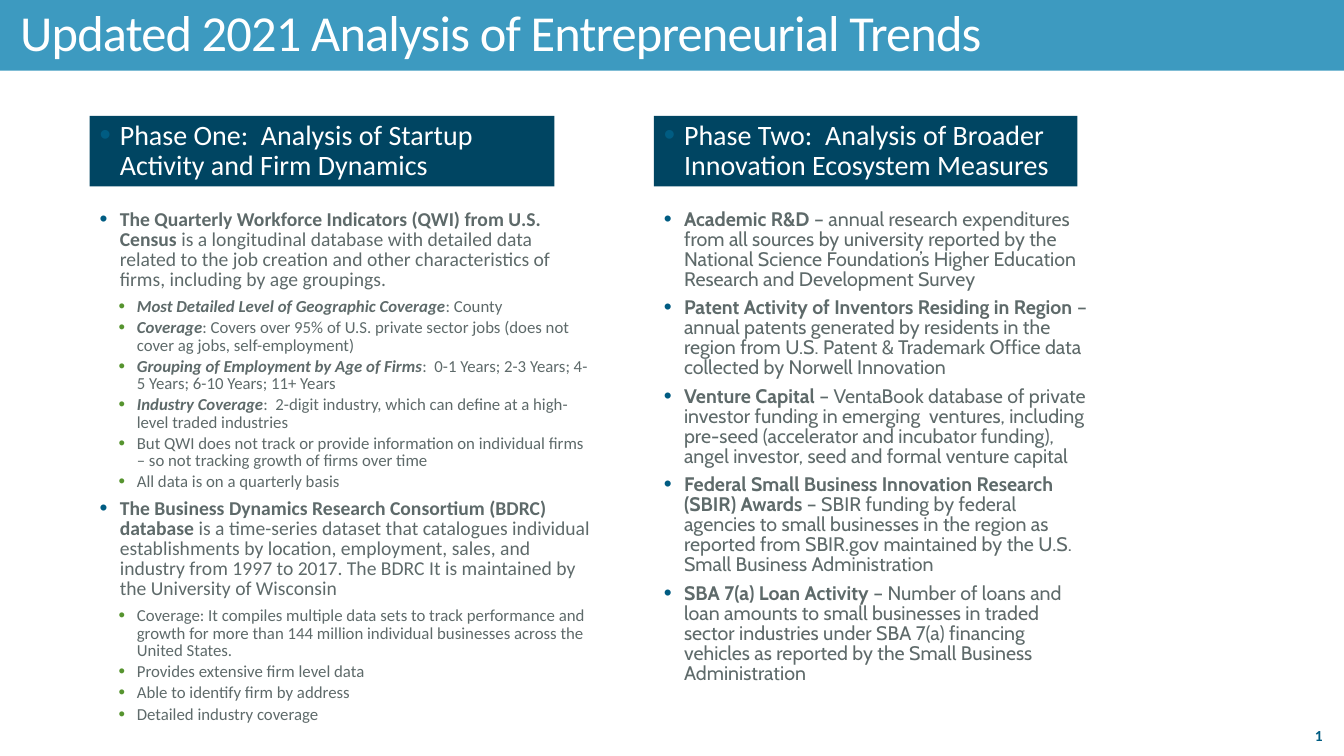
import pptx
import pptx.dml.color
import pptx.enum.shapes
import pptx.enum.text
import pptx.oxml
import pptx.oxml.ns
import pptx.util
import lxml.etree

Cm = pptx.util.Cm
Pt = pptx.util.Pt
ALIGN = pptx.enum.text.PP_ALIGN
ANCHOR = pptx.enum.text.MSO_ANCHOR

TITLE = "Updated 2021 Analysis of Entrepreneurial Trends"
PAGE_NUMBER = "2"

PHASES = [
    {
        "heading": "Phase One:  Analysis of Startup Activity and Firm Dynamics",
        "font": "Calibri", "left": 2.26, "heading_width": 11.71,
        "body_width": 12.9, "body_height": 13.44,
        "points": [
            (0, "The Quarterly Workforce Indicators (QWI) from U.S. Census ",
             "is a longitudinal database with detailed data related to the job creation and other "
             "characteristics of firms, including by age groupings."),
            (1, "Most Detailed Level of Geographic Coverage", ": County"),
            (1, "Coverage", ": Covers over 95% of U.S. private sector jobs (does not cover ag jobs, "
             "self-employment)"),
            (1, "Grouping of Employment by Age of Firms",
             ":  0-1 Years; 2-3 Years; 4-5 Years; 6-10 Years; 11+ Years"),
            (1, "Industry Coverage",
             ":  2-digit industry, which can define at a high-level traded industries"),
            (1, "", "But QWI does not track or provide information on individual firms – so not "
             "tracking growth of firms over time"),
            (1, "", "All data is on a quarterly basis"),
            (0, "The Business Dynamics Research Consortium (BDRC) database",
             " is a time-series dataset that catalogues individual establishments by location, "
             "employment, sales, and industry from 1997 to 2017. The BDRC It is maintained by the "
             "University of Wisconsin"),
            (1, "", "Coverage: It compiles multiple data sets to track performance and growth for "
             "more than 144 million individual businesses across the United States."),
            (1, "", "Provides extensive firm level data"),
            (1, "", "Able to identify firm by address"),
            (1, "", "Detailed industry coverage"),
        ],
    },
    {
        "heading": "Phase Two:  Analysis of Broader Innovation Ecosystem Measures",
        "font": "Cabin", "left": 16.48, "heading_width": 10.67,
        "body_width": 11.18, "body_height": 12.19,
        "points": [
            (0, "Academic R&D", " – annual research expenditures from all sources by university "
             "reported by the National Science Foundation’s Higher Education Research and "
             "Development Survey"),
            (0, "Patent Activity of Inventors Residing in Region ",
             "– annual patents generated by residents in the region from U.S. Patent & Trademark "
             "Office data collected by Norwell Innovation"),
            (0, "Venture Capital ",
             "– VentaBook database of private investor funding in emerging  ventures, including "
             "pre-seed (accelerator and incubator funding), angel investor, seed and formal "
             "venture capital"),
            (0, "Federal Small Business Innovation Research (SBIR) Awards ",
             "– SBIR funding by federal agencies to small businesses in the region as reported "
             "from SBIR.gov maintained by the U.S. Small Business Administration"),
            (0, "SBA 7(a) Loan Activity ",
             "– Number of loans and loan amounts to small businesses in traded sector industries "
             "under SBA 7(a) financing vehicles as reported by the Small Business Administration"),
        ],
    },
]

LEVELS = [
    {"size": 14, "after": 6, "margin": 0.51, "hang": 0.51, "bullet": "005C82", "percent": 115},
    {"size": 12, "after": 3, "margin": 0.94, "hang": 0.46, "bullet": "56942F", "percent": 110},
]

SLIDE_WIDTH, SLIDE_HEIGHT = 33.87, 19.05
BAND_HEIGHT = 1.78
HEADING_TOP, BODY_TOP = 2.92, 5.18


def rgb(value):
    return pptx.dml.color.RGBColor.from_string(value)


def apply(target, values):
    for name, value in values.items():
        setattr(target, name, value)


def add_bar(slide, left, top, width, height, color):
    bar = slide.shapes.add_shape(pptx.enum.shapes.MSO_SHAPE.RECTANGLE,
                                 Cm(left), Cm(top), Cm(width), Cm(height))
    bar.shadow.inherit = False
    bar.fill.solid()
    bar.fill.fore_color.rgb = rgb(color)
    bar.line.fill.background()
    return bar.text_frame


def add_run(paragraph, text, color, **font):
    run = paragraph.add_run()
    run.text = text
    apply(run.font, font)
    run.font.color.rgb = rgb(color)
    return run


def add_bullet(paragraph, level):
    properties = paragraph._p.get_or_add_pPr()
    properties.set("marL", str(Cm(level["margin"])))
    properties.set("indent", str(-Cm(level["hang"])))
    qn = pptx.oxml.ns.qn
    color = lxml.etree.SubElement(properties, qn("a:buClr"))
    lxml.etree.SubElement(color, qn("a:srgbClr"), val=level["bullet"])
    lxml.etree.SubElement(properties, qn("a:buSzPct"), val=str(level["percent"] * 1000))
    lxml.etree.SubElement(properties, qn("a:buFont"), typeface="Arial")
    lxml.etree.SubElement(properties, qn("a:buChar"), char="•")


def add_title(slide):
    frame = add_bar(slide, 0, 0, SLIDE_WIDTH, BAND_HEIGHT, "3D9AC0")
    apply(frame, {"word_wrap": True, "vertical_anchor": ANCHOR.MIDDLE,
                  "margin_left": Cm(0.51), "margin_right": Cm(0.51),
                  "margin_top": 0, "margin_bottom": 0})
    title = frame.paragraphs[0]
    apply(title, {"alignment": ALIGN.LEFT, "line_spacing": 0.9})
    run = add_run(title, TITLE, "FFFFFF", size=Pt(36), name="Calibri")
    run._r.get_or_add_rPr().set("spc", "-60")


def add_page_number(slide):
    frame = slide.shapes.add_textbox(Cm(29.34), Cm(18.03), Cm(4.24), Cm(1.02)).text_frame
    apply(frame, {"word_wrap": True, "vertical_anchor": ANCHOR.MIDDLE})
    number = frame.paragraphs[0]
    number.alignment = ALIGN.RIGHT
    field = add_run(number, PAGE_NUMBER, "005C82", size=Pt(11), name="Calibri", bold=True)._r
    field.tag = pptx.oxml.ns.qn("a:fld")
    field.set("id", "{B6F15528-21DE-4FAA-801E-634DDDAF4B2B}")
    field.set("type", "slidenum")


def add_phase(slide, phase):
    frame = add_bar(slide, phase["left"], HEADING_TOP, phase["heading_width"], BAND_HEIGHT, "004562")
    apply(frame, {"word_wrap": True, "vertical_anchor": ANCHOR.TOP})
    heading = frame.paragraphs[0]
    apply(heading, {"alignment": ALIGN.LEFT, "line_spacing": 0.9})
    add_bullet(heading, LEVELS[0])
    add_run(heading, phase["heading"], "FFFFFF", size=Pt(20), name="Calibri")

    body = slide.shapes.add_textbox(Cm(phase["left"]), Cm(BODY_TOP),
                                    Cm(phase["body_width"]), Cm(phase["body_height"])).text_frame
    body.word_wrap = True
    points = phase["points"]
    for index, (depth, lead, rest) in enumerate(points):
        level = LEVELS[depth]
        following = points[index + 1][0] if index + 1 < len(points) else depth
        point = body.add_paragraph() if index else body.paragraphs[0]
        apply(point, {"level": depth, "alignment": ALIGN.LEFT, "line_spacing": 0.85,
                      "space_after": Pt(LEVELS[min(depth, following)]["after"])})
        add_bullet(point, level)
        font = {"size": Pt(level["size"]), "name": phase["font"]}
        if lead:
            add_run(point, lead, "5E6A6A", bold=True, italic=depth == 1, **font)
        add_run(point, rest, "5E6A6A", **font)


def main():
    deck = pptx.Presentation()
    apply(deck, {"slide_width": Cm(SLIDE_WIDTH), "slide_height": Cm(SLIDE_HEIGHT)})
    slide = deck.slides.add_slide(deck.slide_layouts[6])
    add_title(slide)
    add_page_number(slide)
    for phase in PHASES:
        add_phase(slide, phase)
    deck.save("out.pptx")


if __name__ == "__main__":
    main()
